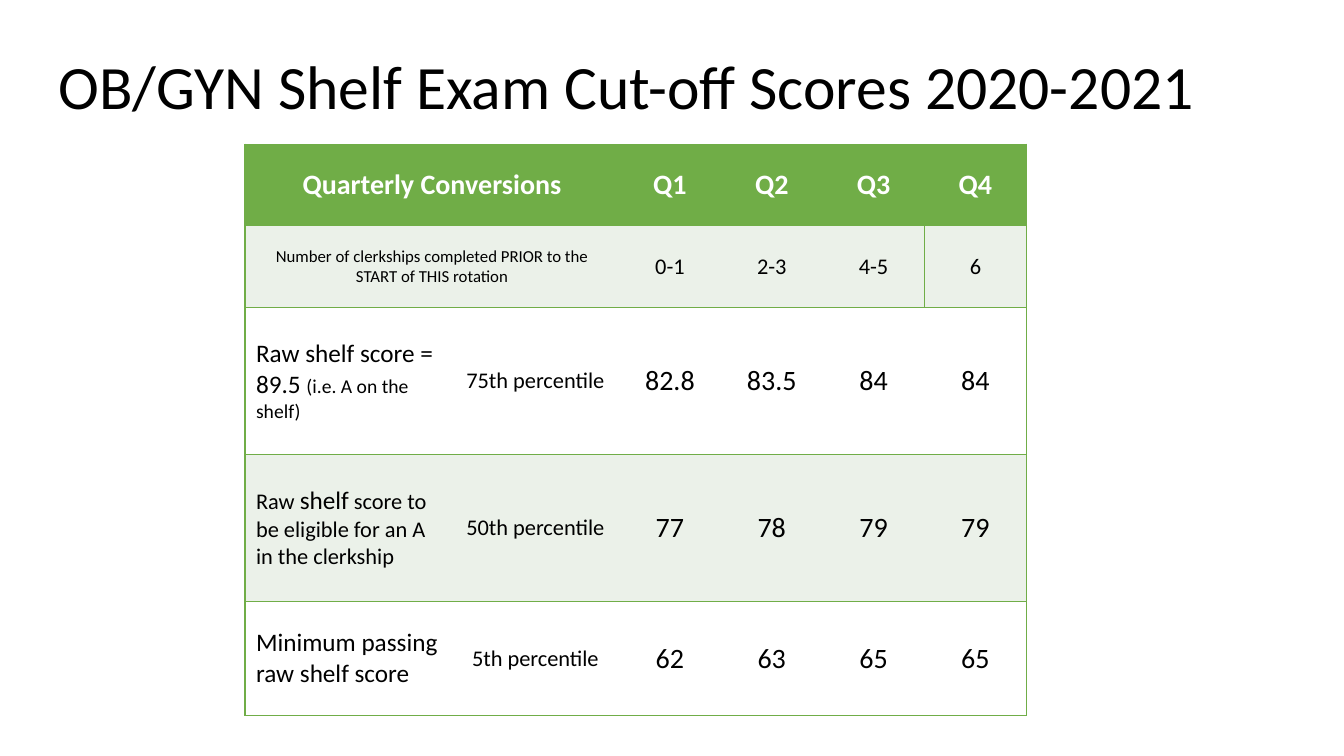
from lxml.etree import SubElement
from pptx import Presentation
from pptx.dml.color import RGBColor
from pptx.enum.text import MSO_ANCHOR as Anchor, MSO_AUTO_SIZE as AutoSize, PP_ALIGN as Align
from pptx.oxml.ns import qn
from pptx.util import Inches, Pt

GREEN = RGBColor(0x70, 0xAD, 0x47)
PALE = RGBColor(0xEB, 0xF1, 0xE9)
WHITE = RGBColor(0xFF, 0xFF, 0xFF)
BLACK = RGBColor(0x00, 0x00, 0x00)
FONT = "Calibri"
PLAIN_STYLE = "{2D5ABB26-0587-4C30-8999-92F81FD0307C}"

TITLE_BOX = (0.48, 0.16, 11.94, 1.45)
TABLE_BOX = (2.43, 1.43, 7.75, 5.67)
COLUMNS = (2.05, 1.66, 1.01, 1.01, 1.01, 1.01)
ROWS = (0.81, 0.81, 1.46, 1.46, 1.13)
FILLS = (GREEN, PALE, WHITE, PALE, WHITE)
LABEL_COLUMNS = 2

HEADINGS = (
    ([("Quarterly Conversions", 20)], None, 20, ("Q1", "Q2", "Q3", "Q4")),
    ([("Number of clerkships completed PRIOR to the START of THIS rotation", 12)],
     None, 16, ("0-1", "2-3", "4-5", "6")),
)
SCORES = (
    ([("Raw shelf score = 89.5 ", 18), ("(i.e. A on the shelf)", 14)],
     "75th percentile", 20, ("82.8", "83.5", "84", "84")),
    ([("Raw ", 16), ("shelf", 18), (" score to be eligible for an A in the clerkship", 16)],
     "50th percentile", 20, ("77", "78", "79", "79")),
    ([("Minimum passing raw shelf score", 18)],
     "5th percentile", 20, ("62", "63", "65", "65")),
)


def write_spans(para, spans, color, bold=False):
    """Add sized runs of text to a paragraph."""
    for text, size in spans:
        span = para.add_run()
        span.text = text
        span.font.name = FONT
        span.font.size = Pt(size)
        span.font.bold = bold
        span.font.color.rgb = color


def draw_borders(cell, sides):
    """Draw a green line on each given side and none on the others."""
    properties = cell._tc.get_or_add_tcPr()
    for side in "LRTB":
        line = SubElement(properties, qn(f"a:ln{side}"), w=str(Pt(1)))
        if side in sides:
            paint = SubElement(line, qn("a:solidFill"))
            SubElement(paint, qn("a:srgbClr"), val=str(GREEN))
        else:
            SubElement(line, qn("a:noFill"))


def format_cell(cell, fill, sides):
    """Set the borders, fill, margins and anchor of a cell."""
    draw_borders(cell, sides)
    cell.fill.solid()
    cell.fill.fore_color.rgb = fill
    cell.margin_left = cell.margin_right = Inches(0.11)
    cell.margin_top = cell.margin_bottom = Inches(0.06)
    cell.vertical_anchor = Anchor.MIDDLE


def border_sides(row, column):
    """Name the sides of a cell that carry a line."""
    last = len(COLUMNS) - 1
    sides = "TB"
    if column == 0 or (row, column) == (1, last):
        sides += "L"
    if column == last or (row, column) == (1, last - 1):
        sides += "R"
    return sides


def add_title(page, box):
    """Place the slide title in its box."""
    title = page.shapes.title
    title.left, title.top, title.width, title.height = map(Inches, box)
    frame = title.text_frame
    frame.word_wrap = True
    frame.auto_size = AutoSize.NONE
    frame.vertical_anchor = Anchor.MIDDLE
    para = frame.paragraphs[0]
    para.alignment = Align.LEFT
    para.line_spacing = 0.9
    write_spans(para, [("OB/GYN Shelf Exam Cut-off Scores 2020-2021", 44)], BLACK)


def add_score_table(page, box):
    """Place the table of quarterly cut-off scores in its box."""
    frame = page.shapes.add_table(len(ROWS), len(COLUMNS), *map(Inches, box))
    table = frame.table
    table._tbl.tblPr.find(qn("a:tableStyleId")).text = PLAIN_STYLE
    for column, share in zip(table.columns, COLUMNS):
        column.width = Inches(box[2] * share / sum(COLUMNS))
    for row, share in zip(table.rows, ROWS):
        row.height = Inches(box[3] * share / sum(ROWS))

    for r, (label, percentile, size, values) in enumerate(HEADINGS + SCORES):
        heading = percentile is None
        if heading:
            table.cell(r, 0).merge(table.cell(r, LABEL_COLUMNS - 1))
        middle = [] if heading else [(percentile, 16)]
        contents = [label, middle] + [[(value, size)] for value in values]
        for c, spans in enumerate(contents):
            cell = table.cell(r, c)
            format_cell(cell, FILLS[r], border_sides(r, c))
            para = cell.text_frame.paragraphs[0]
            para.alignment = Align.CENTER if heading or c else Align.LEFT
            write_spans(para, spans, BLACK if r else WHITE, bold=r == 0)


def main():
    """Build the deck and save it."""
    deck = Presentation()
    deck.slide_width, deck.slide_height = Inches(13.33), Inches(7.5)
    page = deck.slides.add_slide(deck.slide_layouts[5])
    add_title(page, TITLE_BOX)
    add_score_table(page, TABLE_BOX)
    deck.save("out.pptx")


if __name__ == "__main__":
    main()
